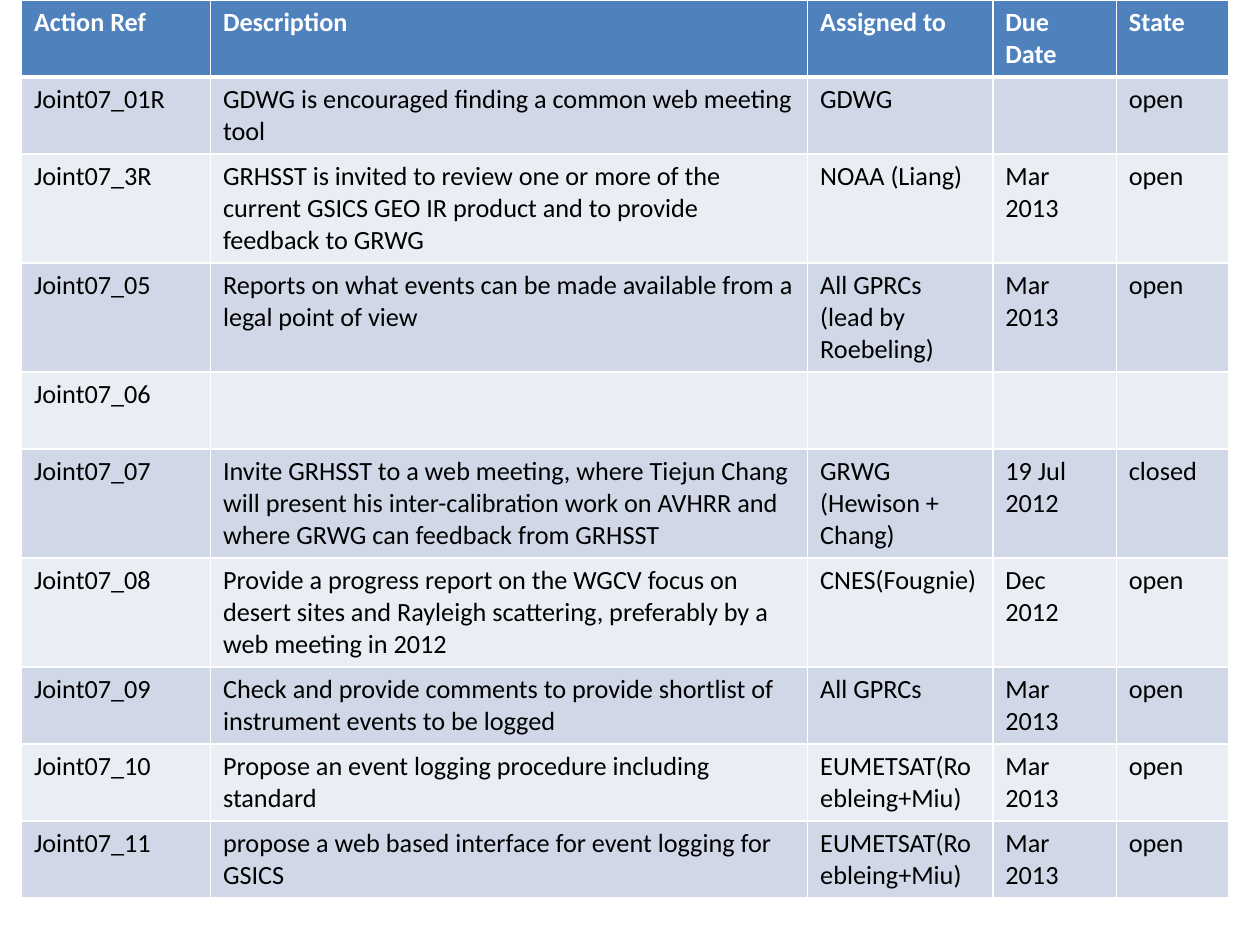
from lxml import etree
from pptx import Presentation
from pptx.dml.color import RGBColor
from pptx.oxml.ns import qn
from pptx.util import Inches, Pt

HEADER = ("Action Ref", "Description", "Assigned to", "Due Date", "State")
ACTIONS = [
    ("Joint07_01R", "GDWG is encouraged finding a common web meeting tool",
     "GDWG", "", "open"),
    ("Joint07_3R", "GRHSST is invited to review one or more of the current GSICS GEO IR "
     "product and to provide feedback to GRWG", "NOAA (Liang)", "Mar 2013", "open"),
    ("Joint07_05", "Reports on what events can be made available from a legal point of view",
     "All GPRCs (lead by Roebeling)", "Mar 2013", "open"),
    ("Joint07_06", "", "", "", ""),
    ("Joint07_07", "Invite GRHSST to a web meeting, where Tiejun Chang will present his "
     "inter-calibration work on AVHRR and where GRWG can feedback from GRHSST",
     "GRWG (Hewison + Chang)", "19 Jul 2012", "closed"),
    ("Joint07_08", "Provide a progress report on the WGCV focus on desert sites and Rayleigh "
     "scattering, preferably by a web meeting in 2012", "CNES(Fougnie)", "Dec 2012", "open"),
    ("Joint07_09", "Check and provide comments to provide shortlist of instrument events "
     "to be logged", "All GPRCs", "Mar 2013", "open"),
    ("Joint07_10", "Propose an event logging procedure including standard",
     "EUMETSAT(Roebleing+Miu)", "Mar 2013", "open"),
    ("Joint07_11", "propose a web based interface for event logging for GSICS",
     "EUMETSAT(Roebleing+Miu)", "Mar 2013", "open"),
]
ROWS = [HEADER] + ACTIONS
COL_WIDTHS = (1.5, 4.74, 1.47, 0.98, 0.89)
LINES = (2, 2, 3, 3, 2, 3, 3, 2, 2, 2)
LINE_HEIGHT, CELL_PADDING = 0.25, 0.11
HEADER_FILL, BANDS = "4F81BD", ("E9EDF4", "D0D8E8")
WHITE, BLACK = "FFFFFF", "000000"


def color(value):
    return RGBColor.from_string(value)


def add_border(cell, side, width):
    ln = etree.SubElement(cell._tc.get_or_add_tcPr(), qn("a:ln" + side), w=str(Pt(width)))
    fill = etree.SubElement(ln, qn("a:solidFill"))
    etree.SubElement(fill, qn("a:srgbClr"), val=WHITE)


def fill_cell(cell, value, row):
    header = row == 0
    widths = {"L": 1, "R": 1, "T": 3 if row == 1 else 1, "B": 3 if header else 1}
    for side, width in widths.items():
        add_border(cell, side, width)
    cell.fill.solid()
    cell.fill.fore_color.rgb = color(HEADER_FILL if header else BANDS[row % 2])
    p = cell.text_frame.paragraphs[0]
    p.text = value
    p.font.name = "Calibri"
    p.font.size = Pt(15)
    p.font.bold = header
    p.font.color.rgb = color(WHITE if header else BLACK)


def main():
    prs = Presentation()
    prs.slide_width, prs.slide_height = Inches(10), Inches(7.5)
    s = prs.slides.add_slide(prs.slide_layouts[6])
    heights = [n * LINE_HEIGHT + CELL_PADDING for n in LINES]
    table = s.shapes.add_table(
        len(ROWS), len(HEADER), Inches(0.17), 0,
        Inches(sum(COL_WIDTHS)), Inches(sum(heights))).table
    for col, width in zip(table.columns, COL_WIDTHS):
        col.width = Inches(width)
    for i, (values, height) in enumerate(zip(ROWS, heights)):
        table.rows[i].height = Inches(height)
        for j, value in enumerate(values):
            fill_cell(table.cell(i, j), value, i)
    prs.save("out.pptx")


if __name__ == "__main__":
    main()
